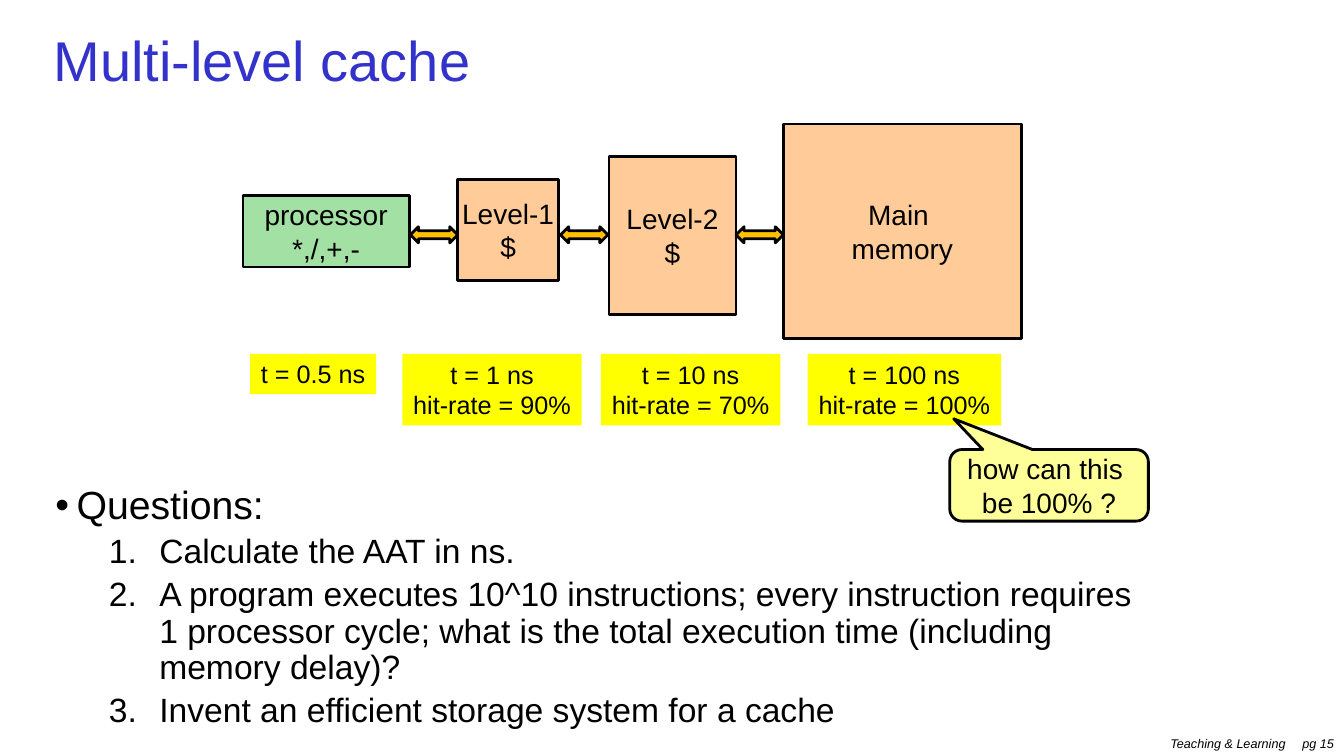
from lxml.etree import SubElement
from pptx import Presentation
from pptx.dml.color import RGBColor
from pptx.enum.shapes import MSO_SHAPE
from pptx.enum.text import MSO_ANCHOR, MSO_AUTO_SIZE, PP_ALIGN
from pptx.oxml.ns import qn
from pptx.util import Inches, Pt

BLACK = RGBColor(0x00, 0x00, 0x00)
TITLE_BLUE = RGBColor(0x33, 0x33, 0xCC)
GREEN = RGBColor(0xA3, 0xE0, 0xA3)
PEACH = RGBColor(0xFF, 0xCC, 0x99)
YELLOW = RGBColor(0xFF, 0xFF, 0x00)
PALE_YELLOW = RGBColor(0xFF, 0xFF, 0x99)
AMBER = RGBColor(0xFF, 0xC0, 0x00)


class SlideBuilder:
    font_name = "Arial"
    line_width = Pt(2)

    def __init__(self, page):
        self.page = page

    def place(self, shape, left, top, width, height):
        shape.left, shape.top = Inches(left), Inches(top)
        shape.width, shape.height = Inches(width), Inches(height)

    def format_paragraph(self, para, size, color=BLACK, align=PP_ALIGN.LEFT, italic=False):
        para.alignment = align
        for span in para.runs:
            span.font.name = self.font_name
            span.font.size = Pt(size)
            span.font.color.rgb = color
            span.font.italic = italic

    def title(self, text, *bounds):
        box = self.page.shapes.title
        self.place(box, *bounds)
        frame = box.text_frame
        frame.text = text
        frame.auto_size = MSO_AUTO_SIZE.NONE
        frame.vertical_anchor = MSO_ANCHOR.MIDDLE
        frame.paragraphs[0].line_spacing = 0.8
        self.format_paragraph(frame.paragraphs[0], 40, TITLE_BLUE)

    def set_bullet(self, para, margin, hanging, tag, **attributes):
        properties = para._p.get_or_add_pPr()
        properties.set("marL", str(Inches(margin)))
        properties.set("indent", str(Inches(-hanging)))
        SubElement(properties, qn("a:buFont"), typeface=self.font_name)
        SubElement(properties, qn(tag), **attributes)

    def questions(self, heading, items, *bounds):
        box = self.page.placeholders[1]
        self.place(box, *bounds)
        frame = box.text_frame
        frame.text = "\n".join([heading, *items])
        frame.auto_size = MSO_AUTO_SIZE.NONE
        for number, para in enumerate(frame.paragraphs):
            size = 24 if number else 28
            para.level = 1 if number else 0
            para.line_spacing = 0.9
            para.space_before = Pt(0.2 * size)
            self.format_paragraph(para, size)
            if number:
                self.set_bullet(para, 1.03, 0.5, "a:buAutoNum", type="arabicPeriod")
            else:
                self.set_bullet(para, 0.21, 0.21, "a:buChar", char="•")

    def shape(self, kind, fill, *bounds, text="", size=20, outlined=True):
        box = self.page.shapes.add_shape(kind, *map(Inches, bounds))
        box.shadow.inherit = False
        box.fill.solid()
        box.fill.fore_color.rgb = fill
        if outlined:
            box.line.color.rgb = BLACK
            box.line.width = self.line_width
        else:
            box.line.fill.background()
        if text:
            frame = box.text_frame
            frame.text = text
            frame.word_wrap = False
            frame.vertical_anchor = MSO_ANCHOR.MIDDLE
            for para in frame.paragraphs:
                self.format_paragraph(para, size, align=PP_ALIGN.CENTER)
        return box

    def footer(self, text, tab, *bounds):
        box = self.page.shapes.add_textbox(*map(Inches, bounds))
        frame = box.text_frame
        frame.text = text
        frame.word_wrap = True
        frame.margin_right = 0
        para = frame.paragraphs[0]
        self.format_paragraph(para, 9, italic=True)
        stops = SubElement(para._p.get_or_add_pPr(), qn("a:tabLst"))
        SubElement(stops, qn("a:tab"), pos=str(Inches(tab)), algn="l")


def main():
    deck = Presentation()
    deck.slide_width, deck.slide_height = Inches(13.33), Inches(7.5)
    builder = SlideBuilder(deck.slides.add_slide(deck.slide_layouts[1]))

    builder.footer("Teaching & Learning\tpg 15", 1.31, 11.51, 7.25, 1.82, 0.25)
    builder.title("Multi-level cache", 0.43, 0.25, 12.46, 0.8)
    builder.questions(
        "Questions:",
        [
            "Calculate the AAT in ns.",
            "A program executes 10^10 instructions; every instruction requires "
            "1 processor cycle; what is the total execution time "
            "(including memory delay)?",
            "Invent an efficient storage system for a cache",
        ],
        0.45, 4.77, 10.92, 2.31,
    )

    memory_levels = [
        ("processor\n*,/,+,-", GREEN, 2.41, 1.94, 1.65, 0.71),
        ("Level-1\n$", PEACH, 4.54, 1.78, 1, 1),
        ("Level-2\n$", PEACH, 6.04, 1.55, 1.26, 1.57),
        ("Main \nmemory", PEACH, 7.77, 1.23, 2.36, 2.13),
    ]
    for text, fill, *bounds in memory_levels:
        builder.shape(MSO_SHAPE.RECTANGLE, fill, *bounds, text=text)

    timings = [
        ("t = 0.5 ns", 2.48, 1.25, 0.4),
        ("t = 1 ns\nhit-rate = 90%", 3.99, 1.78, 0.71),
        ("t = 10 ns\nhit-rate = 70%", 5.96, 1.78, 0.71),
        ("t = 100 ns\nhit-rate = 100%", 8.01, 1.92, 0.71),
    ]
    for text, left, width, height in timings:
        builder.shape(MSO_SHAPE.RECTANGLE, YELLOW, left, 3.51, width, height,
                      text=text, size=18, outlined=False)

    for left in (4.07, 5.56, 7.3):
        builder.shape(MSO_SHAPE.LEFT_RIGHT_ARROW, AMBER, left, 2.25, 0.47, 0.16)

    callout = builder.shape(MSO_SHAPE.ROUNDED_RECTANGULAR_CALLOUT, PALE_YELLOW,
                            9.42, 4.46, 1.97, 0.71, text="how can this \nbe 100% ?")
    for index, value in enumerate((-0.48, -0.93, 0.17)):
        callout.adjustments[index] = value

    deck.save("out.pptx")


if __name__ == "__main__":
    main()
